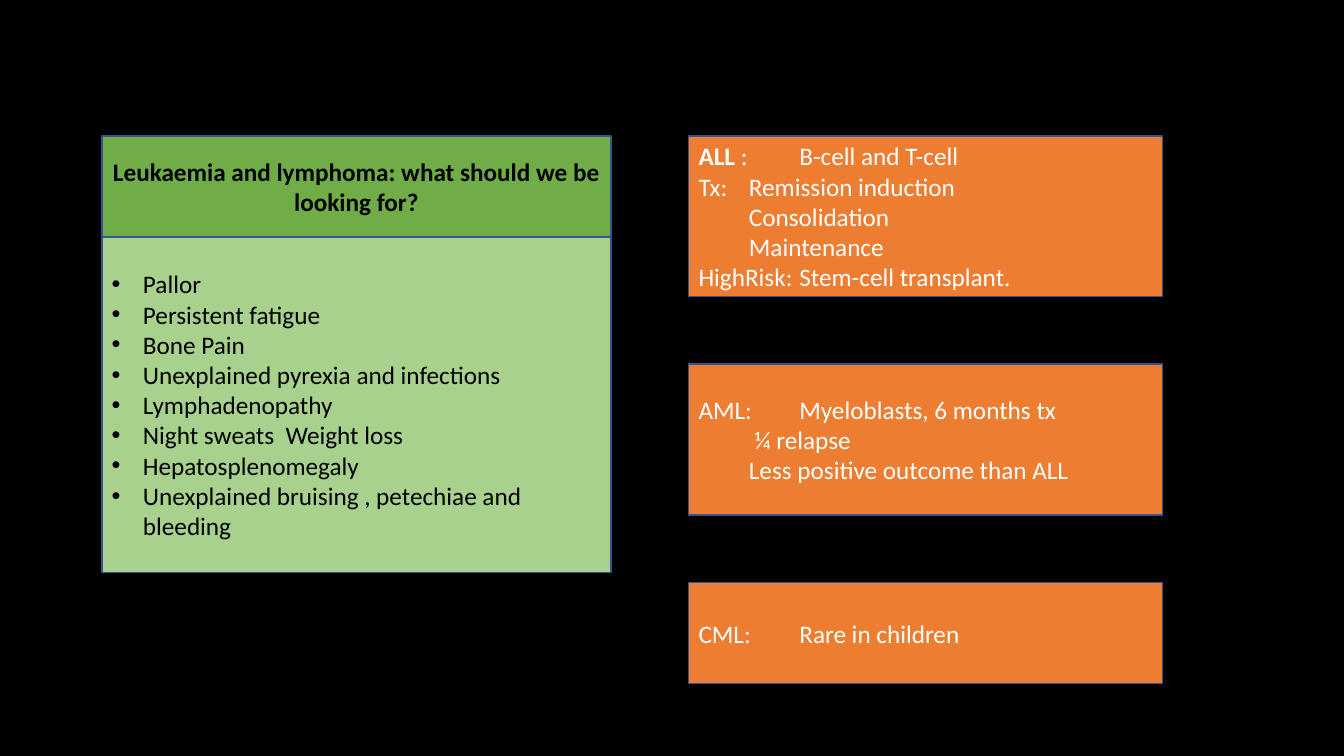
from lxml import etree
from pptx import Presentation
from pptx.dml.color import RGBColor
from pptx.enum.shapes import MSO_SHAPE as Shape
from pptx.enum.text import MSO_ANCHOR as Anchor, PP_ALIGN as Align
from pptx.oxml.ns import qn
from pptx.util import Inches, Pt

# Content: each paragraph is a list of (text, bold) runs
QUESTION = [[("Leukaemia and lymphoma: what should we be looking for?", True)]]
SIGNS = [[(sign, False)] for sign in (
    "Pallor",
    "Persistent fatigue",
    "Bone Pain",
    "Unexplained pyrexia and infections",
    "Lymphadenopathy",
    "Night sweats  Weight loss",
    "Hepatosplenomegaly",
    "Unexplained bruising , petechiae and bleeding",
)]
ALL_TYPE = [
    [("ALL ", True), (": \tB-cell and T-cell", False)],
    [("Tx: \tRemission induction", False)],
    [("\tConsolidation", False)],
    [("\tMaintenance", False)],
    [("HighRisk:\tStem-cell transplant.", False)],
]
AML_TYPE = [
    [("AML:  \tMyeloblasts, 6 months tx", False)],
    [("\t ¼ relapse", False)],
    [("\tLess positive outcome than ALL", False)],
]
CML_TYPE = [[("CML:\tRare in children", False)]]

COLOURS = {
    "background": "000000", "outline": "325491",
    "heading": "70AD47", "signs": "A9D18E", "types": "ED7D31",
    "dark text": "000000", "light text": "FFFFFF",
}
FONT, TEXT_SIZE = "Calibri", 18

# Layout in inches: two columns (left, width) below a shared top edge
SIGNS_COLUMN, TYPES_COLUMN = (1.01, 5.05), (6.83, 4.7)
TOP, HEADING_HEIGHT, SIGNS_HEIGHT = 1.35, 1, 3.33
TYPES_GAP = 0.67
TYPES = [(1.59, ALL_TYPE), (1.5, AML_TYPE), (1, CML_TYPE)]
BULLET_INDENT = 0.31


def colour(name):
    return RGBColor.from_string(COLOURS[name])


def add_bullet(paragraph):
    properties = paragraph._p.get_or_add_pPr()
    properties.set("marL", str(Inches(BULLET_INDENT)))
    properties.set("indent", str(-Inches(BULLET_INDENT)))
    etree.SubElement(properties, qn("a:buFont")).set("typeface", "Arial")
    etree.SubElement(properties, qn("a:buChar")).set("char", "•")


def add_box(slide, column, top, height, fill, text_colour, paragraphs,
            align=Align.LEFT, bulleted=False):
    left, width = column
    shape = slide.shapes.add_shape(
        Shape.RECTANGLE, *map(Inches, (left, top, width, height)))
    shape.shadow.inherit = False
    shape.fill.solid()
    shape.fill.fore_color.rgb = colour(fill)
    shape.line.color.rgb = colour("outline")
    shape.line.width = Pt(1)
    frame = shape.text_frame
    frame.word_wrap = True
    frame.vertical_anchor = Anchor.MIDDLE
    for index, runs in enumerate(paragraphs):
        paragraph = frame.add_paragraph() if index else frame.paragraphs[0]
        paragraph.alignment = align
        if bulleted:
            add_bullet(paragraph)
        for text, bold in runs:
            run = paragraph.add_run()
            run.text = text
            run.font.name = FONT
            run.font.size = Pt(TEXT_SIZE)
            run.font.bold = bold
            run.font.color.rgb = colour(text_colour)


def main():
    presentation = Presentation()
    presentation.slide_width = Inches(13.33)
    presentation.slide_height = Inches(7.5)
    slide = presentation.slides.add_slide(presentation.slide_layouts[6])
    slide.background.fill.solid()
    slide.background.fill.fore_color.rgb = colour("background")

    # Left column: signs under their heading
    add_box(slide, SIGNS_COLUMN, TOP + HEADING_HEIGHT, SIGNS_HEIGHT,
            "signs", "dark text", SIGNS, bulleted=True)
    add_box(slide, SIGNS_COLUMN, TOP, HEADING_HEIGHT,
            "heading", "dark text", QUESTION, align=Align.CENTER)

    # Right column: leukaemia types, stacked with equal gaps
    top = TOP
    for height, paragraphs in TYPES:
        add_box(slide, TYPES_COLUMN, top, height,
                "types", "light text", paragraphs)
        top += height + TYPES_GAP

    presentation.save("out.pptx")


if __name__ == "__main__":
    main()
